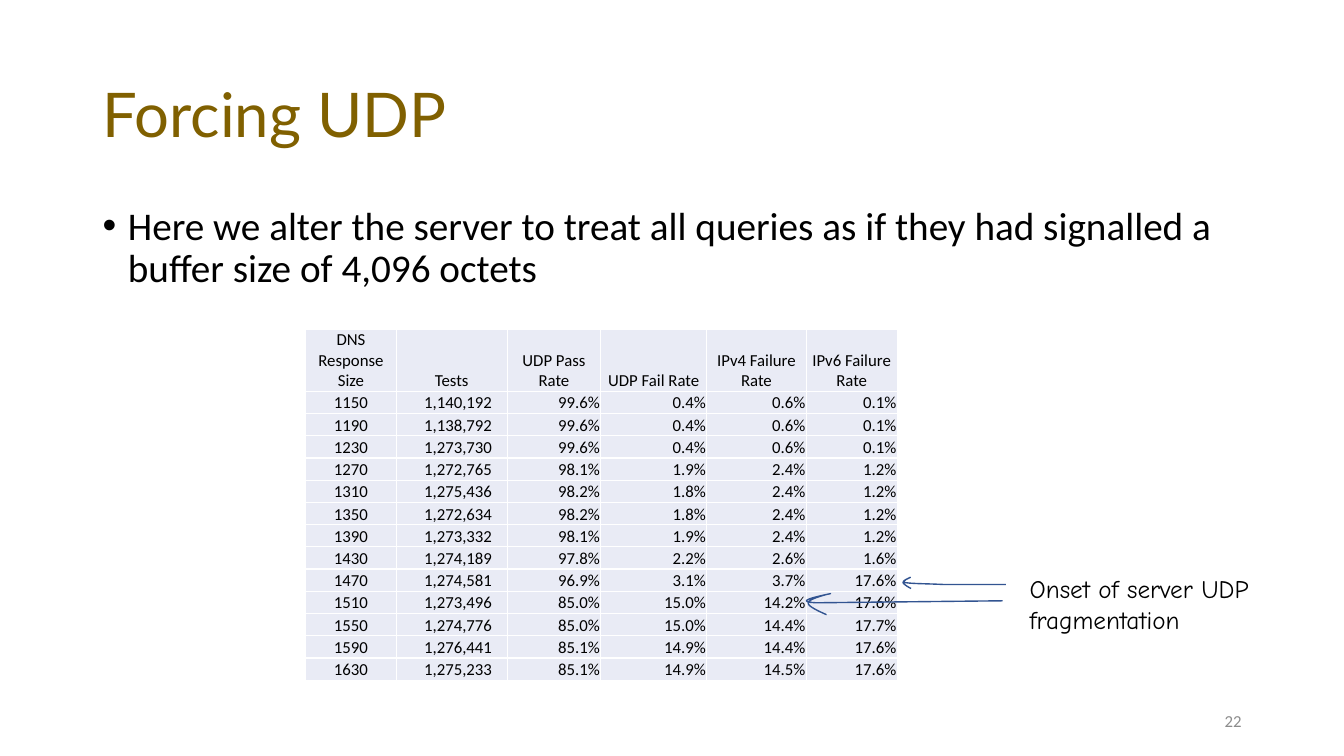
"""Build the "Forcing UDP" slide: a failure-rate table with two annotated arrows."""
from pptx import Presentation
from pptx.dml.color import RGBColor
from pptx.enum.text import MSO_ANCHOR as Anchor, MSO_AUTO_SIZE as AutoSize, PP_ALIGN as Align
from pptx.util import Cm, Pt

TITLE = "Forcing UDP"
POINT = ("Here we alter the server to treat all queries as if they had signalled "
         "a buffer size of 4,096 octets")
CALLOUT = ["Onset of server UDP", "fragmentation"]
PAGE_NUMBER = "22"
HEADINGS = ["DNS Response Size", "Tests", "UDP Pass Rate", "UDP Fail Rate",
            "IPv4 Failure Rate", "IPv6 Failure Rate"]
RESULTS = [
    ("1150", "1,140,192", "99.6%", "0.4%", "0.6%", "0.1%"),
    ("1190", "1,138,792", "99.6%", "0.4%", "0.6%", "0.1%"),
    ("1230", "1,273,730", "99.6%", "0.4%", "0.6%", "0.1%"),
    ("1270", "1,272,765", "98.1%", "1.9%", "2.4%", "1.2%"),
    ("1310", "1,275,436", "98.2%", "1.8%", "2.4%", "1.2%"),
    ("1350", "1,272,634", "98.2%", "1.8%", "2.4%", "1.2%"),
    ("1390", "1,273,332", "98.1%", "1.9%", "2.4%", "1.2%"),
    ("1430", "1,274,189", "97.8%", "2.2%", "2.6%", "1.6%"),
    ("1470", "1,274,581", "96.9%", "3.1%", "3.7%", "17.6%"),
    ("1510", "1,273,496", "85.0%", "15.0%", "14.2%", "17.6%"),
    ("1550", "1,274,776", "85.0%", "15.0%", "14.4%", "17.7%"),
    ("1590", "1,276,441", "85.1%", "14.9%", "14.4%", "17.6%"),
    ("1630", "1,275,233", "85.1%", "14.9%", "14.5%", "17.6%"),
]
COLUMN_WIDTHS = [2.29, 2.79, 2.36, 2.67, 2.51, 2.29]
HEADING_HEIGHT, RESULT_HEIGHT = 1.55, 0.56
TESTS_MARGIN, CELL_MARGIN = 0.38, 0.02

ARROWS = [
    {"tail": (25.35, 14.73), "shaft_end": (23.8, 14.73), "curves": [
        ((23.37, 14.71), (22.94, 14.71), (22.81, 14.68)),
        ((22.66, 14.66), (22.96, 14.55), (22.94, 14.55)),
        ((22.94, 14.55), (22.76, 14.63), (22.76, 14.68)),
        ((22.76, 14.71), (22.86, 14.78), (22.96, 14.83))]},
    {"tail": (25.27, 15.14), "shaft_end": (20.57, 15.19), "curves": [
        ((19.84, 15.16), (20.96, 14.96), (20.93, 14.96)),
        ((20.9, 14.96), (20.37, 15.09), (20.37, 15.19)),
        ((20.35, 15.27), (20.6, 15.39), (20.83, 15.49))]},
]
CURVE_STEPS = 12
COLORS = {"title": "806000", "text": "000000", "cell": "E9EBF5",
          "arrow": "325491", "page": "8C8C8C"}


def rgb(name):
    return RGBColor.from_string(COLORS[name])


def place(shape, left, top, width, height):
    shape.left, shape.top, shape.width, shape.height = map(Cm, (left, top, width, height))


def style(paragraph, size, font="Calibri", color="text", align=Align.LEFT):
    paragraph.alignment = align
    for run in paragraph.runs:
        run.font.size, run.font.name = Pt(size), font
        run.font.color.rgb = rgb(color)


def add_label(slide, box, text):
    label = slide.shapes.add_textbox(*map(Cm, box))
    label.text_frame.text = text
    return label.text_frame


def add_results(slide):
    rows = [HEADINGS, *RESULTS]
    heights = [HEADING_HEIGHT] + [RESULT_HEIGHT] * len(RESULTS)
    table = slide.shapes.add_table(len(rows), len(HEADINGS), Cm(7.7), Cm(8.29),
                                   Cm(sum(COLUMN_WIDTHS)), Cm(sum(heights))).table
    table.first_row = table.horz_banding = False
    for column, width in zip(table.columns, COLUMN_WIDTHS):
        column.width = Cm(width)
    for r, (values, height) in enumerate(zip(rows, heights)):
        table.rows[r].height = Cm(height)
        for c, value in enumerate(values):
            cell = table.cell(r, c)
            cell.fill.solid()
            cell.fill.fore_color.rgb = rgb("cell")
            cell.vertical_anchor = Anchor.BOTTOM
            cell.margin_left = cell.margin_top = cell.margin_right = Cm(CELL_MARGIN)
            cell.margin_bottom = 0
            if r and c == 1:
                cell.margin_right = Cm(TESTS_MARGIN)
            cell.text_frame.text = value
            align = Align.RIGHT if r and c else Align.CENTER
            style(cell.text_frame.paragraphs[0], 12, align=align)


def bezier(start, first, second, end):
    for step in range(1, CURVE_STEPS + 1):
        t = step / CURVE_STEPS
        yield tuple(Cm((1 - t) ** 3 * a + 3 * (1 - t) ** 2 * t * b
                       + 3 * (1 - t) * t ** 2 * c + t ** 3 * d)
                    for a, b, c, d in zip(start, first, second, end))


def add_arrow(slide, tail, shaft_end, curves):
    builder = slide.shapes.build_freeform(*map(Cm, tail))
    points, start = [tuple(map(Cm, shaft_end))], shaft_end
    for curve in curves:
        points.extend(bezier(start, *curve))
        start = curve[-1]
    builder.add_line_segments(points, close=False)
    arrow = builder.convert_to_shape()
    arrow.shadow.inherit = False
    arrow.fill.background()
    arrow.line.color.rgb = rgb("arrow")
    arrow.line.width = Pt(1)


def main():
    prs = Presentation()
    prs.slide_width, prs.slide_height = Cm(33.87), Cm(19.05)
    slide = prs.slides.add_slide(prs.slide_layouts[1])
    title, body = slide.placeholders

    place(title, 2.33, 1.01, 29.21, 3.68)
    title.text_frame.text = TITLE
    title.text_frame.vertical_anchor = Anchor.MIDDLE
    style(title.text_frame.paragraphs[0], 44, "Lato", "title")

    place(body, 2.33, 5.07, 29.21, 12.09)
    body.text_frame.text = POINT
    point = body.text_frame.paragraphs[0]
    style(point, 28)
    point.line_spacing, point.space_before = 0.9, Pt(10)
    indent = point._p.get_or_add_pPr()
    indent.set("marL", str(Cm(0.64)))
    indent.set("indent", str(-Cm(0.64)))
    for placeholder in (title, body):
        placeholder.text_frame.auto_size = AutoSize.NONE

    add_results(slide)

    callout = add_label(slide, (25.7, 14.33, 8.08, 1.8), "\n".join(CALLOUT))
    callout.word_wrap = False
    callout.auto_size = AutoSize.SHAPE_TO_FIT_TEXT
    for line in callout.paragraphs:
        style(line, 18, "Comic Neue")

    for arrow in ARROWS:
        add_arrow(slide, **arrow)

    page = add_label(slide, (23.92, 17.66, 7.62, 1.01), PAGE_NUMBER)
    page.word_wrap = True
    page.vertical_anchor = Anchor.MIDDLE
    style(page.paragraphs[0], 12, color="page", align=Align.RIGHT)

    prs.save("out.pptx")


if __name__ == "__main__":
    main()
